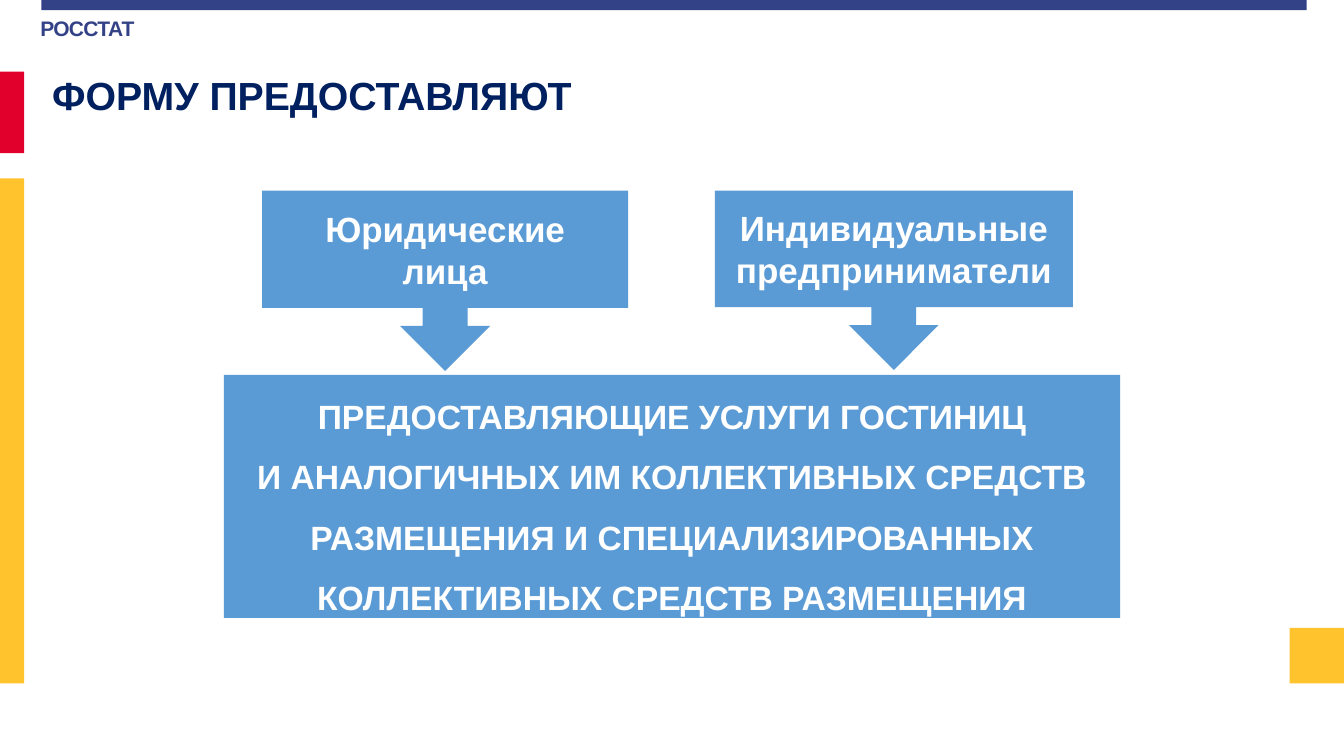
from pptx import Presentation
from pptx.dml.color import RGBColor as RGB
from pptx.enum.shapes import MSO_SHAPE as Shape
from pptx.enum.text import MSO_ANCHOR as Anchor, PP_ALIGN as Align
from pptx.util import Inches, Pt

COLORS = {"navy": "334286", "red": "E1002B", "gold": "FFC32E",
          "title": "002060", "blue": "5B9BD5", "white": "FFFFFF"}

deck = Presentation()
deck.slide_width, deck.slide_height = Inches(13.33), Inches(7.5)
slide = deck.slides.add_slide(deck.slide_layouts[6])


def add_block(kind, box, color):
    block = slide.shapes.add_shape(kind, *map(Inches, box))
    block.shadow.inherit = False
    block.fill.solid()
    block.fill.fore_color.rgb = RGB.from_string(COLORS[color])
    block.line.fill.background()
    return block


def set_text(shape, lines, size, color, inset, align=Align.LEFT, space=1.0):
    frame = shape.text_frame
    frame.word_wrap = True
    frame.margin_left = frame.margin_right = Inches(inset[0])
    frame.margin_top = frame.margin_bottom = Inches(inset[1])
    frame.text = "\n".join(lines)
    for para in frame.paragraphs:
        para.alignment = align
        para.line_spacing = space
        para.font.name = "Arial"
        para.font.size = Pt(size)
        para.font.bold = True
        para.font.color.rgb = RGB.from_string(COLORS[color])
    return frame


# Edge bars
for box, color in [((0.41, 0, 12.55, 0.1), "navy"),
                   ((0, 0.71, 0.24, 0.81), "red"),
                   ((0, 1.77, 0.24, 5.01), "gold"),
                   ((12.79, 6.23, 0.54, 0.55), "gold")]:
    add_block(Shape.RECTANGLE, box, color)

# Header and title
head = slide.shapes.add_textbox(Inches(0.4), Inches(0.15), Inches(1.15), Inches(0.3))
frame = set_text(head, ["РОССТАТ"], 15, "navy", (0, 0))
frame.paragraphs[0].runs[0].font._element.set("spc", "-50")
title = slide.shapes.add_textbox(Inches(0.42), Inches(0.66), Inches(7.9), Inches(0.97))
set_text(title, ["ФОРМУ ПРЕДОСТАВЛЯЮТ"], 28, "title", (0.1, 0.05))

# Services box
base = add_block(Shape.RECTANGLE, (2.22, 3.72, 8.89, 2.41), "blue")
frame = set_text(base, ["ПРЕДОСТАВЛЯЮЩИЕ УСЛУГИ ГОСТИНИЦ",
                        "И АНАЛОГИЧНЫХ ИМ КОЛЛЕКТИВНЫХ СРЕДСТВ РАЗМЕЩЕНИЯ "
                        "И СПЕЦИАЛИЗИРОВАННЫХ КОЛЛЕКТИВНЫХ СРЕДСТВ РАЗМЕЩЕНИЯ"],
                 24, "white", (0.19, 0.19), Align.CENTER, 1.5)
frame.vertical_anchor = Anchor.MIDDLE

# Respondents, each pointing down to the services
for left, width, height, label in [(2.6, 3.63, 1.79, "Юридические лица"),
                                   (7.09, 3.55, 1.78, "Индивидуальные предприниматели")]:
    card = add_block(Shape.DOWN_ARROW_CALLOUT, (left, 1.89, width, height), "blue")
    frame = set_text(card, [label], 25, "white", (0.19, 0.19), Align.CENTER)
    frame.vertical_anchor = Anchor.MIDDLE

deck.save("out.pptx")
